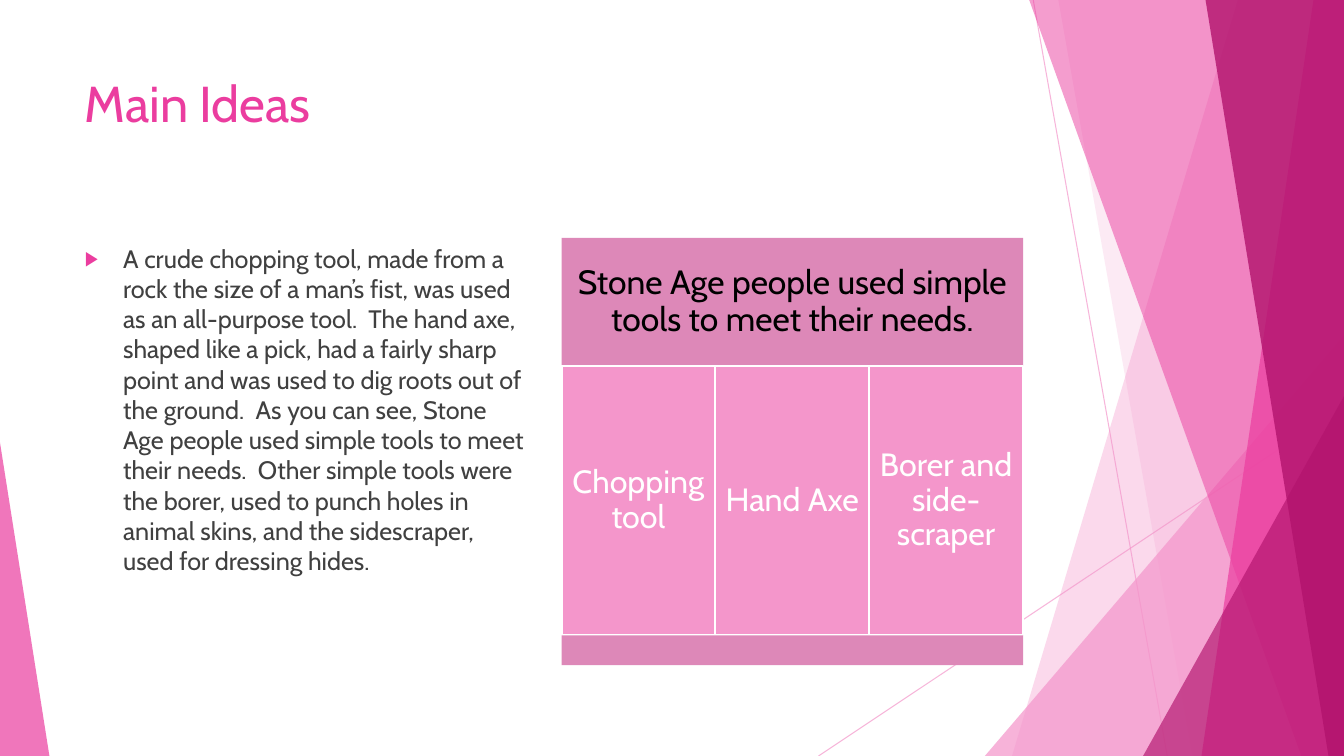
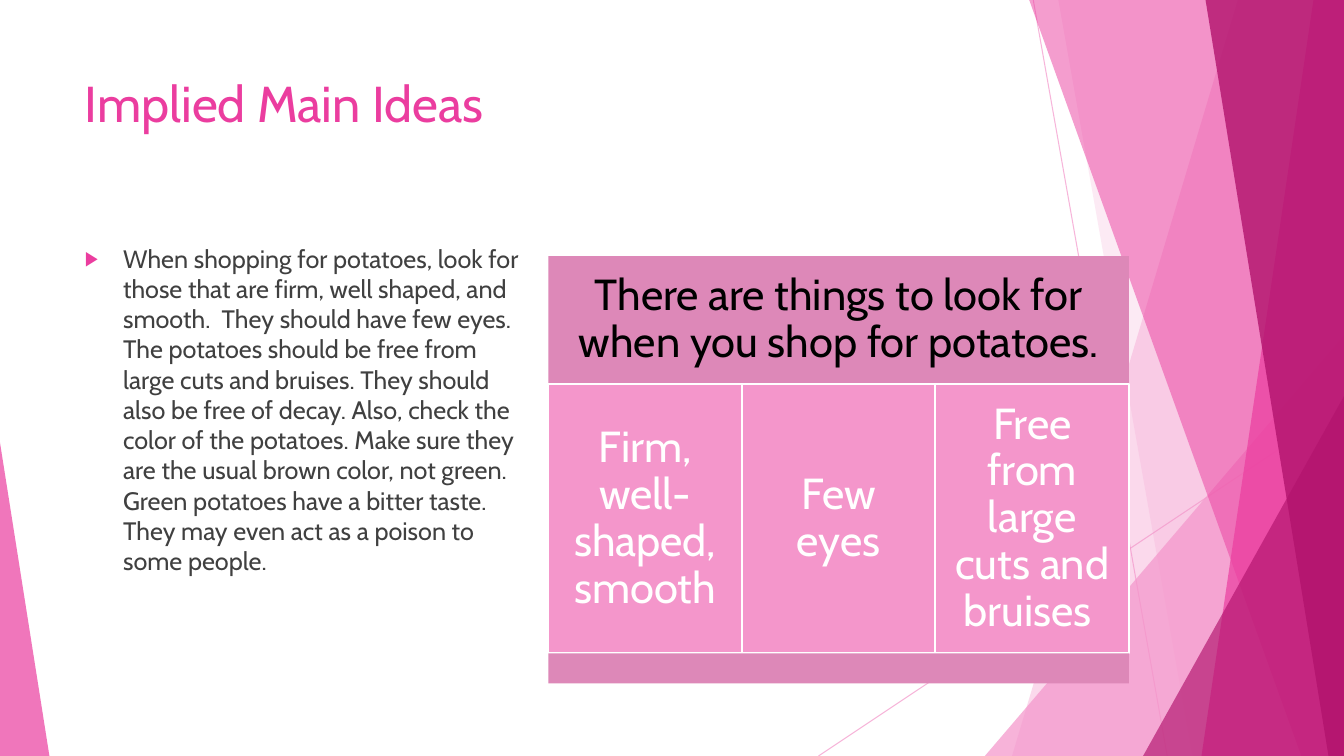
"""Build two slides on main ideas, each pairing a paragraph with an idea chart."""
import dataclasses

import pptx
import pptx.dml.color
import pptx.enum.shapes
import pptx.enum.text
import pptx.oxml.ns
import pptx.oxml.xmlchemy
import pptx.util
from lxml import etree

SHAPE = pptx.enum.shapes.MSO_SHAPE
ALIGN = pptx.enum.text.PP_ALIGN
ANCHOR = pptx.enum.text.MSO_ANCHOR
WIDTH = pptx.util.Inches(13.333)
HEIGHT = pptx.util.Inches(7.5)


@dataclasses.dataclass(frozen=True)
class Theme:
    font: str = "Cabin"
    accent: str = "EB3D9F"
    deep: str = "B2136D"
    light: str = "F496CB"
    band: str = "DD88B8"
    ink: str = "404040"
    black: str = "000000"
    white: str = "FFFFFF"
    title_size: int = 36
    body_size: int = 18


THEME = Theme()
TITLE_BOX = (5.56, 8.93, 70.5, 19.2)
BODY_BOX = (5.56, 31.47, 34.35, 56.53)
PANEL_ROWS = (0.3, 0.63, 0.07)

SLIDES = (
    {
        "title": "Main Ideas",
        "body": "A crude chopping tool, made from a rock the size of a man’s fist, was used as an "
                "all-purpose tool.  The hand axe, shaped like a pick, had a fairly sharp point and "
                "was used to dig roots out of the ground.  As you can see, Stone Age people used "
                "simple tools to meet their needs.  Other simple tools were the borer, used to "
                "punch holes in animal skins, and the sidescraper, used for dressing hides.",
        "heading": "Stone Age people used simple tools to meet their needs.",
        "details": ("Chopping tool", "Hand Axe", "Borer and side-scraper"),
        "panel": (41.78, 31.47, 34.35, 56.53),
        "sizes": (24, 23),
        "inset": 0.09,
    },
    {
        "title": "Implied Main Ideas",
        "body": "When shopping for potatoes, look for those that are firm, well shaped, and "
                "smooth.  They should have few eyes. The potatoes should be free from large cuts "
                "and bruises. They should also be free of decay. Also, check the color of the "
                "potatoes. Make sure they are the usual brown color, not green. Green potatoes "
                "have a bitter taste.  They may even act as a poison to some people.",
        "heading": "There are things to look for when you shop for potatoes.",
        "details": ("Firm, well-shaped, smooth", "Few eyes", "Free from large cuts and bruises "),
        "panel": (40.8, 33.87, 43.2, 56.53),
        "sizes": (31, 31),
        "inset": 0.13,
    },
)


def across(percent):
    return round(WIDTH * percent / 100)


def down(percent):
    return round(HEIGHT * percent / 100)


def frame(left, top, width, height):
    return across(left), down(top), across(width), down(height)


def rgb(color):
    return pptx.dml.color.RGBColor.from_string(color)


def add_xml(parent, tag, **attributes):
    element = etree.SubElement(parent, pptx.oxml.ns.qn(tag))
    for name, value in attributes.items():
        element.set(name, str(value))
    return element


def set_opacity(shape, percent):
    for color in shape.element.iter(pptx.oxml.ns.qn("a:srgbClr")):
        add_xml(color, "a:alpha", val=percent * 1000)


def paint(shape, color, opacity=100, outline=None):
    shape.shadow.inherit = False
    shape.fill.solid()
    shape.fill.fore_color.rgb = rgb(color)
    if outline:
        shape.line.color.rgb = rgb(outline)
        shape.line.width = pptx.util.Pt(1.5)
    else:
        shape.line.fill.background()
    if opacity < 100:
        set_opacity(shape, opacity)


def write(shape, text, *, size, color, align=ALIGN.LEFT, anchor=ANCHOR.TOP,
          inset=None, spacing=None, before=0):
    text_frame = shape.text_frame
    text_frame.word_wrap = True
    text_frame.auto_size = pptx.enum.text.MSO_AUTO_SIZE.NONE
    text_frame.vertical_anchor = anchor
    if inset is not None:
        for side in ("left", "top", "right", "bottom"):
            setattr(text_frame, f"margin_{side}", pptx.util.Inches(inset))
    paragraph = text_frame.paragraphs[0]
    paragraph.alignment = align
    paragraph.space_before = pptx.util.Pt(before)
    if spacing:
        paragraph.line_spacing = spacing
    run = paragraph.add_run()
    run.text = text
    run.font.name = THEME.font
    run.font.size = pptx.util.Pt(size)
    run.font.color.rgb = rgb(color)
    return paragraph


def add_bullet(paragraph):
    properties = paragraph._p.get_or_add_pPr()
    indent = pptx.util.Inches(0.38)
    properties.set("marL", str(indent))
    properties.set("indent", str(-indent))
    add_xml(add_xml(properties, "a:buClr"), "a:srgbClr", val=THEME.accent)
    add_xml(properties, "a:buSzPct", val=80000)
    add_xml(properties, "a:buFont", typeface="Arial")
    add_xml(properties, "a:buChar", char="▶")


def add_ray(shapes, start, end):
    ray = shapes.add_connector(
        pptx.enum.shapes.MSO_CONNECTOR.STRAIGHT,
        across(start[0]), down(start[1]), across(end[0]), down(end[1]))
    ray.line.color.rgb = rgb(THEME.light)
    ray.line.width = pptx.util.Pt(0.75)
    set_opacity(ray, 70)
    add_xml(ray.element.spPr, "a:effectLst")


def add_shard(shapes, top, bottom, color, opacity):
    builder = shapes.build_freeform(across(top), 0)
    builder.add_line_segments([(WIDTH, 0), (WIDTH, HEIGHT), (across(bottom), HEIGHT)], close=True)
    paint(builder.convert_to_shape(), color, opacity)


def add_corner(shapes, left, top, width, color, opacity, apex):
    triangle = shapes.add_shape(SHAPE.ISOSCELES_TRIANGLE, *frame(left, top, width, 100 - top))
    triangle.adjustments[0] = apex
    paint(triangle, color, opacity)


def add_backdrop(slide, layout):
    group = slide.shapes.add_group_shape()
    shapes = group.shapes
    add_ray(shapes, (76.88, 0), (86.85, 100))
    add_ray(shapes, (100, 53.7), (60.9, 100))
    add_shard(shapes, 92.1, 75.3, THEME.light, 36)
    add_shard(shapes, 78.75, 88.73, THEME.light, 20)
    add_corner(shapes, 73.28, 44.4, 26.72, THEME.light, 72, apex=1)
    add_shard(shapes, 76.58, 96.83, THEME.accent, 50)
    add_shard(shapes, 97.73, 89.4, THEME.accent, 70)
    add_shard(shapes, 89.7, 98.85, THEME.deep, 80)
    add_corner(shapes, 85.05, 52.4, 14.95, THEME.deep, 66, apex=1)
    add_corner(shapes, 0, 58.53, 3.68, THEME.accent, 70, apex=0)
    layout.shapes.element.append(group.element)


def arrange_layout(layout):
    boxes = {0: TITLE_BOX, 1: BODY_BOX}
    for placeholder in list(layout.placeholders):
        box = boxes.get(placeholder.placeholder_format.idx)
        if box:
            placeholder.left, placeholder.top, placeholder.width, placeholder.height = frame(*box)
        else:
            layout.shapes.element.remove(placeholder.element)


def add_panel(slide, heading, details, box, sizes, inset):
    left, top, width, height = frame(*box)
    heading_height, detail_height, foot_height = (round(height * share) for share in PANEL_ROWS)
    detail_top = top + heading_height
    detail_width = width // len(details)
    style = {"align": ALIGN.CENTER, "anchor": ANCHOR.MIDDLE, "inset": inset, "spacing": 0.9}

    banner = slide.shapes.add_shape(SHAPE.RECTANGLE, left, top, width, heading_height)
    paint(banner, THEME.band)
    write(banner, heading, size=sizes[0], color=THEME.black, **style)
    for column, detail in enumerate(details):
        cell = slide.shapes.add_shape(
            SHAPE.RECTANGLE, left + column * detail_width, detail_top, detail_width, detail_height)
        paint(cell, THEME.light, outline=THEME.white)
        write(cell, detail, size=sizes[1], color=THEME.white, **style)
    foot = slide.shapes.add_shape(
        SHAPE.RECTANGLE, left, detail_top + detail_height, width, foot_height)
    paint(foot, THEME.band)


def add_idea_slide(presentation, layout, content):
    slide = presentation.slides.add_slide(layout)
    write(slide.shapes.title, content["title"], size=THEME.title_size, color=THEME.accent)
    add_bullet(write(slide.placeholders[1], content["body"], size=THEME.body_size,
                     color=THEME.ink, before=10))
    add_panel(slide, content["heading"], content["details"], content["panel"],
              content["sizes"], content["inset"])
    return slide


def main():
    presentation = pptx.Presentation()
    presentation.slide_width, presentation.slide_height = WIDTH, HEIGHT
    layout = presentation.slide_layouts[1]
    arrange_layout(layout)
    slides = [add_idea_slide(presentation, layout, content) for content in SLIDES]
    add_backdrop(slides[0], layout)
    presentation.save("out.pptx")


if __name__ == "__main__":
    main()
